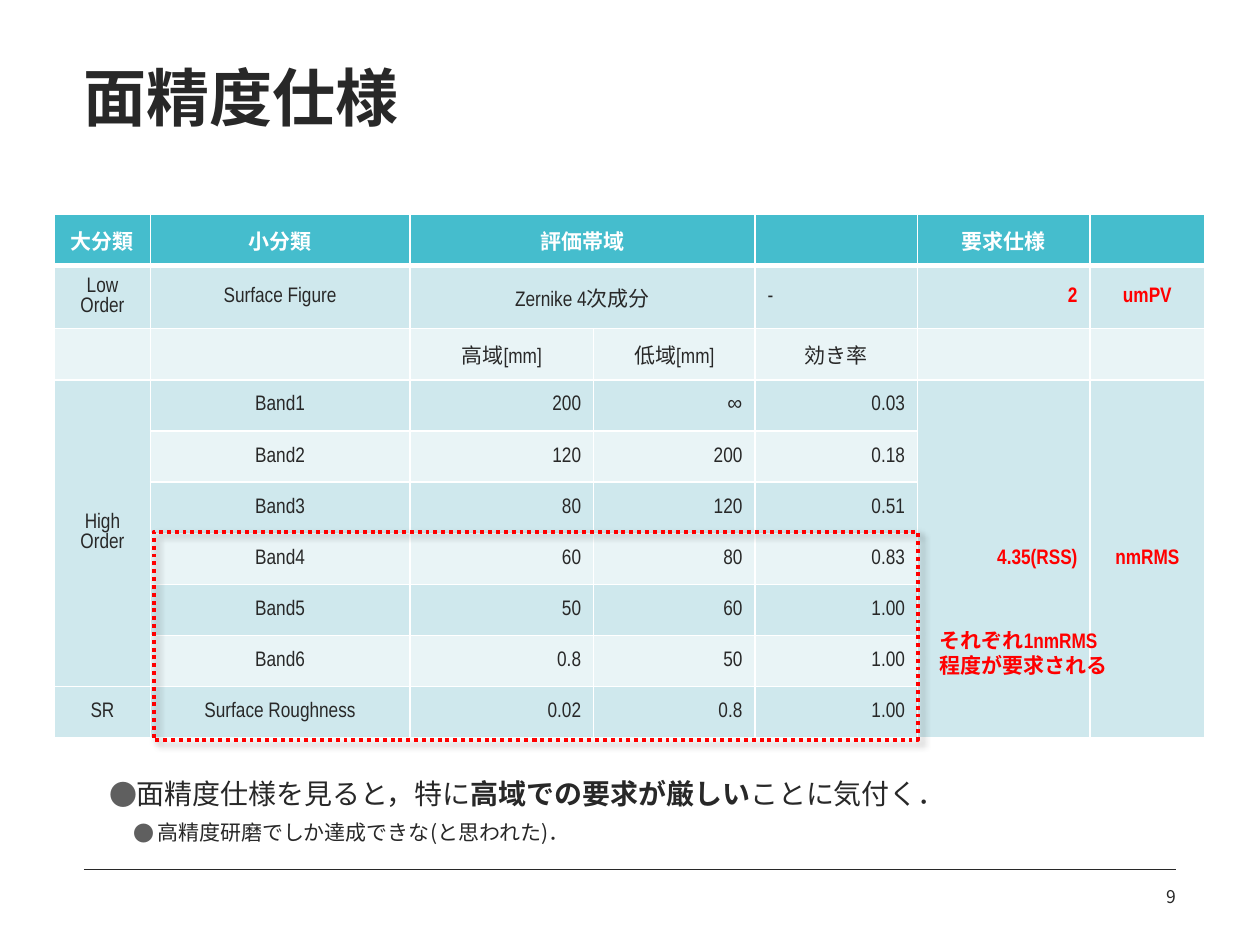
from lxml import etree
from pptx import Presentation, util as u
from pptx.dml.color import RGBColor
from pptx.enum import dml, shapes, text
from pptx.oxml.ns import qn

Pt = u.Pt
CJK, NARROW = "Noto Sans CJK JP", "Arial Narrow"
INK, RED, WHITE = "282828", "FF0000", "FFFFFF"
HEADER, BANDS = "45BDCD", ("E9F4F6", "CFE8ED")
ALIGN = {"l": text.PP_ALIGN.LEFT, "c": text.PP_ALIGN.CENTER, "r": text.PP_ALIGN.RIGHT}

COLUMNS = (54.7, 148.3, 105.1, 92.2, 92.9, 98.6, 65.5)
ROWS = (
    ("大分類", "小分類", "評価帯域", "", "", "要求仕様", ""),
    ("Low Order", "Surface Figure", "Zernike 4次成分", "", "-", "2", "umPV"),
    ("", "", "高域[mm]", "低域[mm]", "効き率", "", ""),
    ("High Order", "Band1", "200", "∞", "0.03", "4.35(RSS)", "nmRMS"),
    ("", "Band2", "120", "200", "0.18", "", ""),
    ("", "Band3", "80", "120", "0.51", "", ""),
    ("", "Band4", "60", "80", "0.83", "", ""),
    ("", "Band5", "50", "60", "1.00", "", ""),
    ("", "Band6", "0.8", "50", "1.00", "", ""),
    ("SR", "Surface Roughness", "0.02", "0.8", "1.00", "", ""),
)
# First row, first column, last row, last column
MERGES = ((0, 2, 0, 3), (1, 2, 1, 3), (3, 0, 8, 0), (3, 5, 9, 5), (3, 6, 9, 6))


def color(value):
    return RGBColor.from_string(value)


def add_span(para, words, size, font=CJK, ink=INK, bold=False):
    span = para.add_run()
    span.text = words
    span.font.size, span.font.bold, span.font.name = Pt(size), bold, font
    span.font.color.rgb = color(ink)
    etree.SubElement(span.font._element, qn("a:ea"), typeface=CJK)


def add_text_box(page, box, anchor=text.MSO_ANCHOR.TOP, insets=(0, 0, 0, 0), wrap=True):
    frame = page.shapes.add_textbox(*map(Pt, box)).text_frame
    frame.word_wrap, frame.vertical_anchor = wrap, anchor
    (frame.margin_left, frame.margin_top,
     frame.margin_right, frame.margin_bottom) = map(Pt, insets)
    return frame


def add_title(page, box):
    frame = add_text_box(page, box, text.MSO_ANCHOR.MIDDLE, (0, 0, 0, 4.3))
    para = frame.paragraphs[0]
    para.line_spacing = 1.2
    add_span(para, "面精度仕様", 36, bold=True)


def add_footer(page, box):
    left, top, width, height = box
    rule = page.shapes.add_connector(shapes.MSO_CONNECTOR.STRAIGHT,
                                     Pt(left), Pt(top), Pt(left + width), Pt(top))
    rule.line.color.rgb, rule.line.width = color(INK), Pt(0.25)
    etree.SubElement(rule._element.spPr, qn("a:effectLst"))
    number = add_text_box(page, (left + width - 85, top + 5.8, 85, height - 5.8),
                          text.MSO_ANCHOR.MIDDLE)
    para = number.paragraphs[0]
    para.alignment, para.line_spacing = ALIGN["r"], 1.2
    add_span(para, "9", 10)


def add_bullet(para, level, indent):
    para.level, para.line_spacing = level, 1.2
    props = para._p.get_or_add_pPr()
    props.set("marL", str(Pt(indent)))
    props.set("indent", str(Pt(-13.7)))
    ink = etree.SubElement(props, qn("a:buClr"))
    etree.SubElement(ink, qn("a:srgbClr"), val="5F5F5F")
    etree.SubElement(props, qn("a:buFont"), typeface=CJK)
    etree.SubElement(props, qn("a:buChar"), char="●")


def add_remarks(page, box):
    frame = add_text_box(page, box)
    main = frame.paragraphs[0]
    add_bullet(main, 0, 28)
    add_span(main, "面精度仕様を見ると，特に", 16)
    add_span(main, "高域での要求が厳しい", 16, bold=True)
    add_span(main, "ことに気付く．", 16)
    detail = frame.add_paragraph()
    add_bullet(detail, 1, 41.8)
    detail.space_before = Pt(2.4)
    add_span(detail, "高精度研磨でしか達成できな(と思われた)．", 12)


def set_borders(cell, bottom):
    props = cell._tc.get_or_add_tcPr()
    widths = {"a:lnL": 1, "a:lnR": 1, "a:lnT": 1, "a:lnB": bottom}
    for place, (tag, width) in enumerate(widths.items()):
        line = etree.Element(qn(tag), w=str(Pt(width)))
        fill = etree.SubElement(line, qn("a:solidFill"))
        etree.SubElement(fill, qn("a:srgbClr"), val=WHITE)
        props.insert(place, line)


def cell_align(row, column, words):
    if words == "-":
        return "l"
    numeric = (row > 2 and column in (2, 3, 4)) or (row > 0 and column == 5)
    return "r" if numeric else "c"


def add_spec_table(page, box):
    grid = page.shapes.add_table(len(ROWS), len(COLUMNS), *map(Pt, box)).table
    for column, width in zip(grid.columns, COLUMNS):
        column.width = Pt(width)
    for r, row in enumerate(ROWS):
        grid.rows[r].height = Pt(box[3] / len(ROWS))
        for c, words in enumerate(row):
            cell = grid.cell(r, c)
            cell.vertical_anchor = text.MSO_ANCHOR.MIDDLE
            cell.fill.solid()
            cell.fill.fore_color.rgb = color(BANDS[r % 2] if r else HEADER)
            set_borders(cell, 1 if r else 3)
            para = cell.text_frame.paragraphs[0]
            para.alignment = ALIGN[cell_align(r, c, words)]
            ink = WHITE if r == 0 else RED if c > 4 else INK
            if words:
                add_span(para, words, 12, NARROW, ink, bold=ink != INK)
            else:
                para.font.size = Pt(12)
    for top, left, bottom, right in MERGES:
        grid.cell(top, left).merge(grid.cell(bottom, right))


def add_strict_bands_frame(page, box):
    """Dotted, shadowed outline around the bands with the strictest demands."""
    frame = page.shapes.add_shape(shapes.MSO_SHAPE.RECTANGLE, *map(Pt, box))
    frame.fill.background()
    frame.line.color.rgb, frame.line.width = color(RED), Pt(2.25)
    frame.line.dash_style = dml.MSO_LINE.ROUND_DOT
    frame.shadow.inherit = False
    effects = frame._element.spPr.find(qn("a:effectLst"))
    shadow = etree.SubElement(effects, qn("a:outerShdw"), blurRad=str(Pt(4)),
                              dist=str(Pt(3)), dir="2700000", algn="tl", rotWithShape="0")
    ink = etree.SubElement(shadow, qn("a:srgbClr"), val="000000")
    etree.SubElement(ink, qn("a:alpha"), val="40000")


def add_demand_note(page, box):
    frame = add_text_box(page, box, insets=(7.2, 3.6, 7.2, 3.6), wrap=False)
    for number, words in enumerate(("それぞれ1nmRMS", "程度が要求される")):
        para = frame.add_paragraph() if number else frame.paragraphs[0]
        add_span(para, words, 12, NARROW, RED, bold=True)


def main():
    deck = Presentation()
    deck.slide_width, deck.slide_height = Pt(720), Pt(540)
    page = deck.slides.add_slide(deck.slide_layouts[6])
    add_footer(page, (48, 496.8, 624, 23))
    add_title(page, (48, 17.3, 556, 71.3))
    add_remarks(page, (48, 440, 624, 45.4))
    add_spec_table(page, (31.2, 122.6, 657.3, 292.5))
    add_strict_bands_frame(page, (87.8, 303.8, 436.6, 119))
    add_demand_note(page, (530, 355, 118.8, 36))
    deck.save("out.pptx")


if __name__ == "__main__":
    main()
